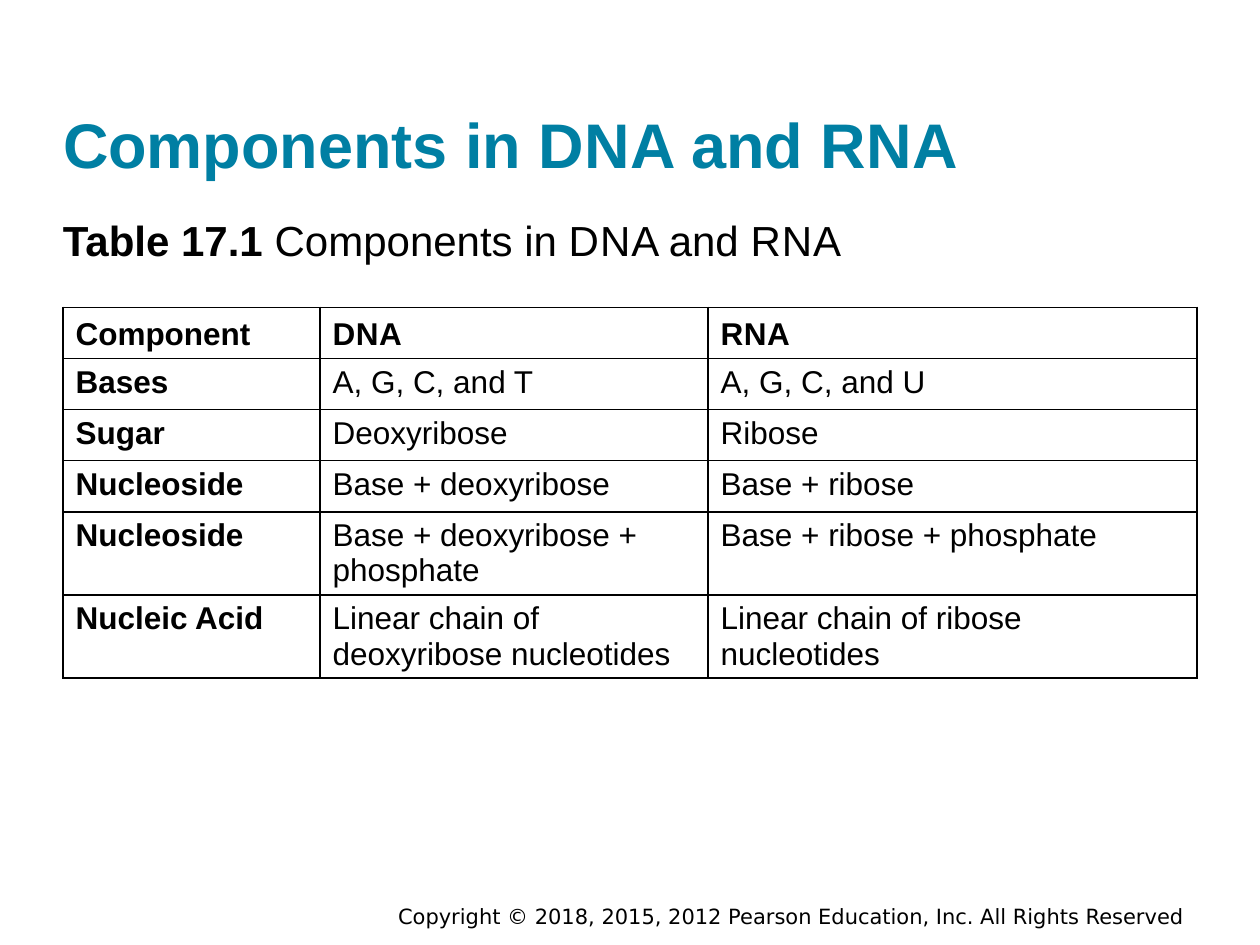
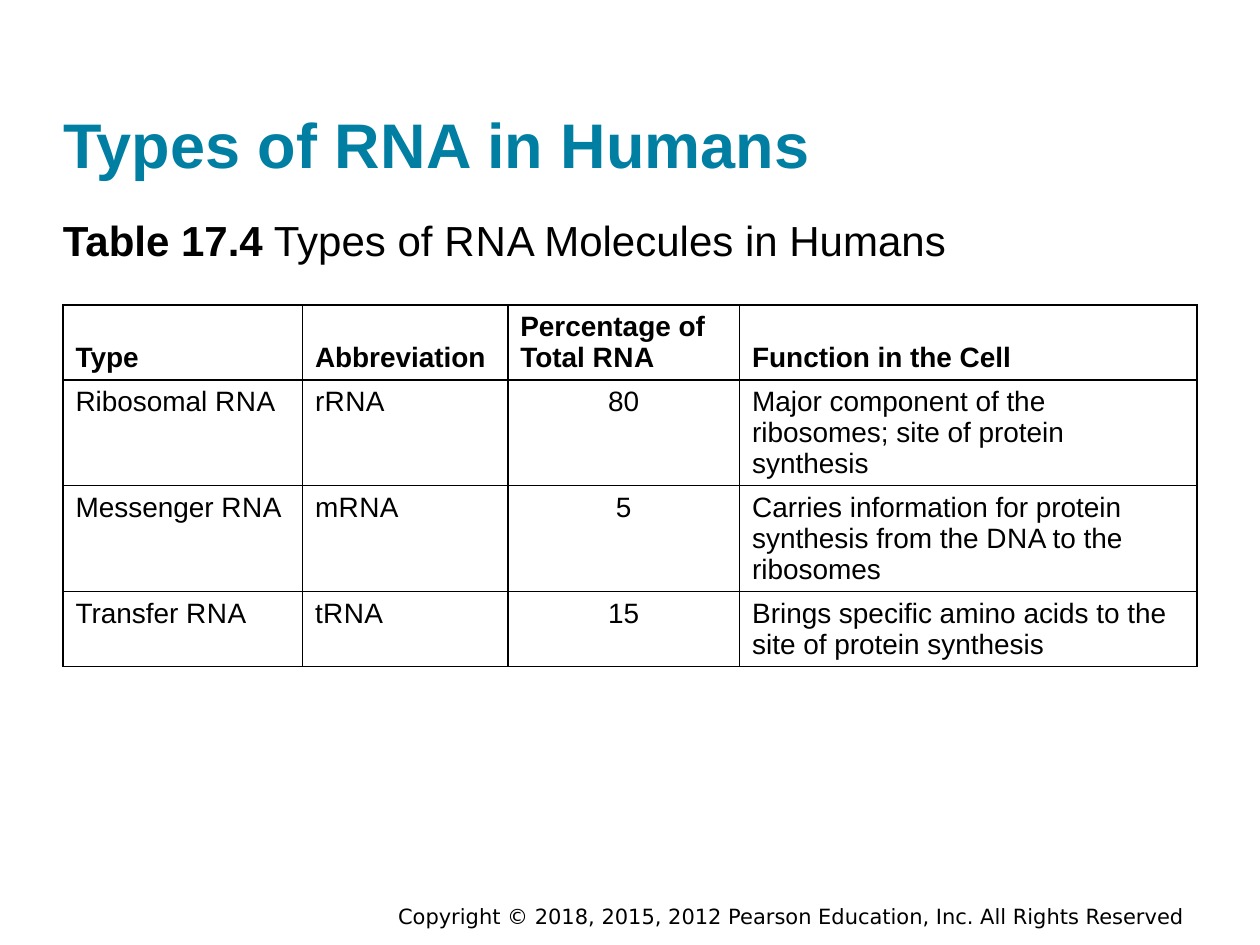
from dataclasses import dataclass

from lxml.etree import SubElement
from pptx import Presentation
from pptx.dml.color import RGBColor
from pptx.enum.text import MSO_ANCHOR as Anchor, MSO_AUTO_SIZE as AutoSize, PP_ALIGN as Align
from pptx.oxml.ns import qn
from pptx.util import Inches, Pt

# Content
COPYRIGHT = "Copyright © 2018, 2015, 2012 Pearson Education, Inc. All Rights Reserved"
ACRONYMS = ("DNA", "RNA")
SLIDES = [
    {
        "title": "Components in DNA and RNA",
        "caption": ("Table 17.1", " Components in DNA and RNA"),
        "table_top": 2.44,
        "text_size": 18,
        "first_columns": (2.04, 3.08),
        "bold_labels": True,
        "centred_column": None,
        "rows": [
            ("Component", "DNA", "RNA"),
            ("Bases", "A, G, C, and T", "A, G, C, and U"),
            ("Sugar", "Deoxyribose", "Ribose"),
            ("Nucleoside", "Base + deoxyribose", "Base + ribose"),
            ("Nucleoside", "Base + deoxyribose + phosphate", "Base + ribose + phosphate"),
            ("Nucleic Acid", "Linear chain of deoxyribose nucleotides",
             "Linear chain of ribose nucleotides"),
        ],
    },
    {
        "title": "Types of RNA in Humans",
        "caption": ("Table 17.4", " Types of RNA Molecules in Humans"),
        "table_top": 2.42,
        "text_size": 16,
        "first_columns": (1.9, 1.63, 1.84),
        "bold_labels": False,
        "centred_column": 2,
        "rows": [
            ("Type", "Abbreviation", "Percentage of Total RNA", "Function in the Cell"),
            ("Ribosomal RNA", "rRNA", "80",
             "Major component of the ribosomes; site of protein synthesis"),
            ("Messenger RNA", "mRNA", "5",
             "Carries information for protein synthesis from the DNA to the ribosomes"),
            ("Transfer RNA", "tRNA", "15",
             "Brings specific amino acids to the site of protein synthesis"),
        ],
    },
]


@dataclass(frozen=True)
class Theme:
    accent: RGBColor = RGBColor(0x00, 0x7F, 0xA3)
    ink: RGBColor = RGBColor(0, 0, 0)
    font: str = "Arial"
    footer_font: str = "DejaVu Sans"
    title_size: int = 36
    caption_size: int = 24
    footer_size: int = 12
    thin_space: int = 1
    caption_thin_space: int = 2
    border: float = 1


THEME = Theme()

# Grid, in inches
WIDTH, HEIGHT, MARGIN = 10, 7.5, 0.5
CONTENT_WIDTH = WIDTH - 2 * MARGIN
FOOTER_WIDTH, FOOTER_HEIGHT = 6.6, 0.46
ROW_HEIGHT = Pt(29.2)


def add_span(para, text, size, bold=False, color=THEME.ink, font=THEME.font):
    span = para.add_run()
    span.text = text
    span.font.name = font
    span.font.size = Pt(size)
    span.font.bold = bold
    span.font.color.rgb = color


def add_text(para, text, size, bold=False, color=THEME.ink, thin=THEME.thin_space):
    """Write text with the letters of each acronym set apart by a thin space."""
    spelled = " ".join("|".join(word) if word.endswith(ACRONYMS) else word
                       for word in text.split(" "))
    for i, piece in enumerate(spelled.split("|")):
        if i:
            add_span(para, " ", thin, bold, color)
        add_span(para, piece, size, bold, color)


def set_frame(box, anchor, inset=0):
    frame = box.text_frame
    frame.word_wrap = True
    frame.auto_size = AutoSize.NONE
    frame.vertical_anchor = anchor
    frame.margin_left = frame.margin_right = Inches(inset)
    frame.margin_top = frame.margin_bottom = Inches(inset / 2)
    return frame


def add_title(page, text):
    box = page.shapes.title
    box.left, box.top = Inches(MARGIN), Inches(0.24)
    box.width, box.height = Inches(CONTENT_WIDTH), Inches(1.2)
    para = set_frame(box, Anchor.BOTTOM).paragraphs[0]
    para.alignment = Align.LEFT
    add_text(para, text, THEME.title_size, True, THEME.accent)


def add_caption(page, label, text):
    box = page.shapes.add_textbox(
        Inches(MARGIN), Inches(1.7), Inches(CONTENT_WIDTH), Inches(0.45))
    para = set_frame(box, Anchor.TOP).paragraphs[0]
    for words, bold in ((label, True), (text, False)):
        add_text(para, words, THEME.caption_size, bold, thin=THEME.caption_thin_space)


def add_footer(page):
    box = page.shapes.add_textbox(
        Inches(WIDTH - MARGIN - FOOTER_WIDTH), Inches(HEIGHT - FOOTER_HEIGHT),
        Inches(FOOTER_WIDTH), Inches(FOOTER_HEIGHT))
    para = set_frame(box, Anchor.MIDDLE, inset=0.1).paragraphs[0]
    para.alignment = Align.RIGHT
    add_span(para, COPYRIGHT, THEME.footer_size, font=THEME.footer_font)


def set_borders(cell):
    properties = cell._tc.get_or_add_tcPr()
    for side in ("lnL", "lnR", "lnT", "lnB"):
        line = SubElement(properties, qn(f"a:{side}"), w=str(Pt(THEME.border)))
        fill = SubElement(line, qn("a:solidFill"))
        SubElement(fill, qn("a:srgbClr"), val=str(THEME.ink))


def add_data_table(page, content):
    rows = content["rows"]
    first = content["first_columns"]
    widths = (*first, CONTENT_WIDTH - sum(first))
    table = page.shapes.add_table(
        len(rows), len(widths), Inches(MARGIN), Inches(content["table_top"]),
        Inches(CONTENT_WIDTH), ROW_HEIGHT * len(rows)).table
    table.first_row = table.horz_banding = False
    for column, width in zip(table.columns, widths):
        column.width = Inches(width)

    for r, row in enumerate(rows):
        table.rows[r].height = ROW_HEIGHT
        for c, text in enumerate(row):
            is_header = r == 0
            cell = table.cell(r, c)
            cell.vertical_anchor = Anchor.BOTTOM if is_header else Anchor.TOP
            para = cell.text_frame.paragraphs[0]
            if c == content["centred_column"] and not is_header:
                para.alignment = Align.CENTER
            bold = is_header or (c == 0 and content["bold_labels"])
            add_text(para, text, content["text_size"], bold)
            set_borders(cell)
            cell.fill.background()


def main():
    deck = Presentation()
    deck.slide_width, deck.slide_height = Inches(WIDTH), Inches(HEIGHT)
    title_only = deck.slide_layouts[5]
    for content in SLIDES:
        page = deck.slides.add_slide(title_only)
        add_footer(page)
        add_title(page, content["title"])
        add_caption(page, *content["caption"])
        add_data_table(page, content)
    deck.save("out.pptx")


if __name__ == "__main__":
    main()
